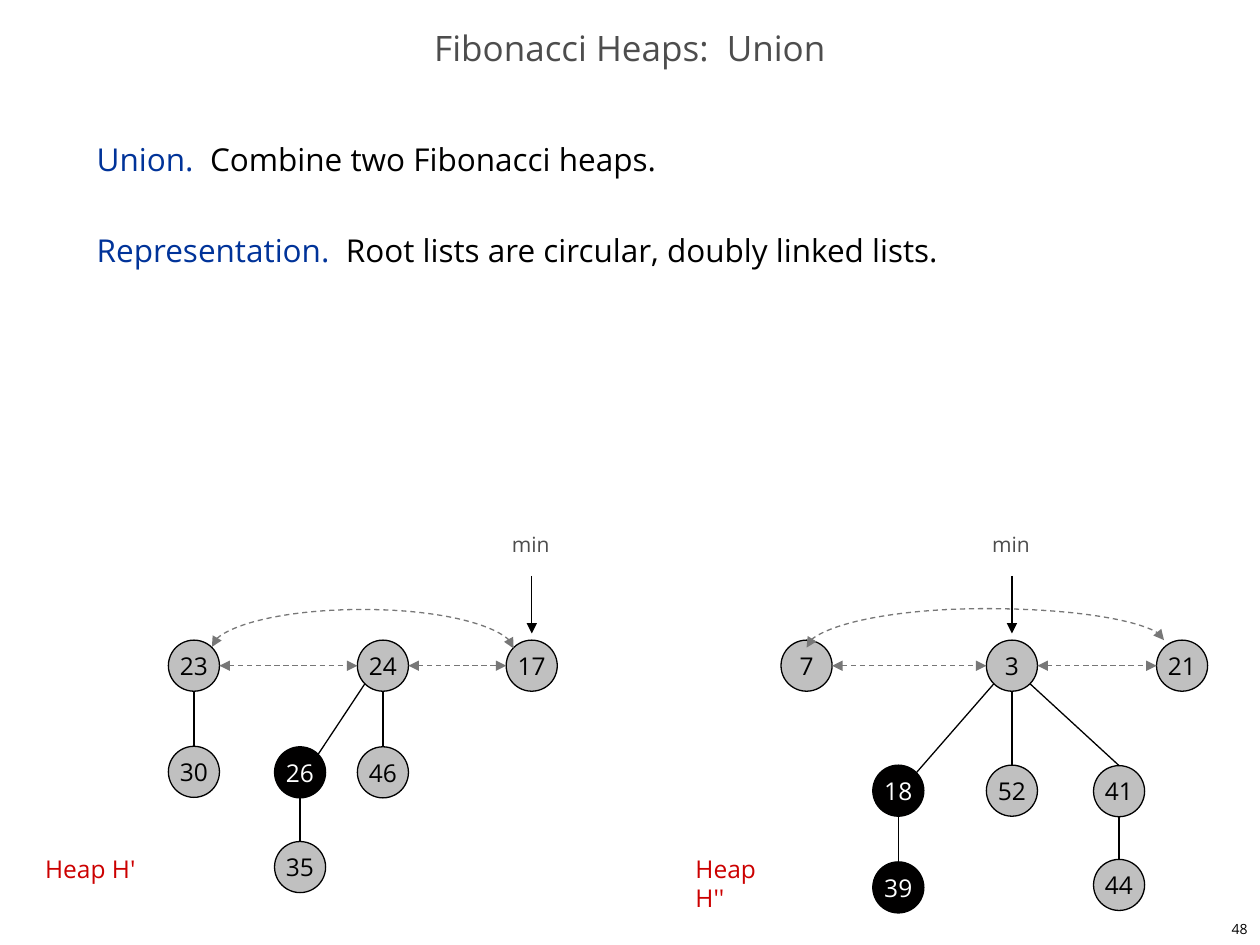
from dataclasses import dataclass
from math import sqrt

from lxml import etree
from pptx import Presentation
from pptx.dml.color import RGBColor
from pptx.enum.dml import MSO_LINE
from pptx.enum.shapes import MSO_CONNECTOR, MSO_SHAPE
from pptx.enum.text import MSO_ANCHOR, PP_ALIGN
from pptx.oxml.ns import qn
from pptx.util import Cm, Pt

STRAIGHT, CURVE = MSO_CONNECTOR.STRAIGHT, MSO_CONNECTOR.CURVE
OVAL, DASH = MSO_SHAPE.OVAL, MSO_LINE.DASH
LEFT, CENTER, RIGHT = PP_ALIGN.LEFT, PP_ALIGN.CENTER, PP_ALIGN.RIGHT
TOP, MIDDLE = MSO_ANCHOR.TOP, MSO_ANCHOR.MIDDLE


@dataclass(frozen=True)
class Theme:
    font: str = "Open Sans"
    ink: str = "000000"
    paper: str = "FFFFFF"
    muted: str = "4D4D4D"
    term: str = "003399"
    heap: str = "CC0000"
    node: str = "C0C0C0"
    marked: str = "010000"
    link: str = "777777"
    title_size: int = 20
    body_size: int = 18
    node_size: int = 14
    min_size: int = 12
    number_size: int = 8
    line_width: float = 0.75


THEME = Theme()

# Heap geometry in centimetres, relative to the box of the heap
RADIUS = 0.515
ROOT_Y = 2.83
ARC_Y = 1.68
ARC_RISE = 0.03
DIAGONAL = RADIUS / sqrt(2)
SITES = {
    "top": (0, -RADIUS), "bottom": (0, RADIUS),
    "left": (-RADIUS, 0), "right": (RADIUS, 0),
    "top left": (-DIAGONAL, -DIAGONAL), "top right": (DIAGONAL, -DIAGONAL),
    "bottom left": (-DIAGONAL, DIAGONAL), "bottom right": (DIAGONAL, DIAGONAL),
}

# Nodes: key -> centre x, centre y; edges: parent, site, child, site
FIRST_HEAP = {
    "label": "Heap H'",
    "roots": [23, 24, 17],
    "min": 17,
    "arc_end": "top right",
    "marked": {26},
    "nodes": {23: (3.25, ROOT_Y), 24: (7.06, ROOT_Y), 17: (10.06, ROOT_Y),
              30: (3.25, 4.97), 26: (5.39, 4.98), 46: (7.06, 4.98),
              35: (5.39, 6.89)},
    "edges": [(23, "bottom", 30, "top"), (24, "bottom left", 26, "top right"),
              (24, "bottom", 46, "top"), (26, "bottom", 35, "top")],
}
SECOND_HEAP = {
    "label": "Heap H''",
    "roots": [7, 3, 21],
    "min": 3,
    "arc_end": "top",
    "marked": {18, 39},
    "nodes": {7: (2.49, ROOT_Y), 3: (6.63, ROOT_Y), 21: (10.06, ROOT_Y),
              18: (4.34, 5.35), 52: (6.63, 5.35), 41: (8.79, 5.36),
              39: (4.34, 7.3), 44: (8.79, 7.25)},
    "edges": [(3, "bottom left", 18, "top right"), (3, "bottom", 52, "top"),
              (3, "bottom right", 41, "top"), (18, "bottom", 39, "top"),
              (41, "bottom", 44, "top")],
}


def add_run(paragraph, text, size, color):
    run = paragraph.add_run()
    run.text = text
    run.font.name = THEME.font
    run.font.size = Pt(size)
    run.font.color.rgb = RGBColor.from_string(color)


def add_text(slide, box, runs, size, align=LEFT, anchor=TOP, wrap=True):
    """Place one paragraph of (text, colour) runs and return it."""
    frame = slide.shapes.add_textbox(*map(Cm, box)).text_frame
    frame.word_wrap = wrap
    frame.vertical_anchor = anchor
    paragraph = frame.paragraphs[0]
    paragraph.alignment = align
    for text, color in runs:
        add_run(paragraph, text, size, color)
    return paragraph


def add_line(slide, start, end, color, kind=STRAIGHT, dashed=False, ends=()):
    line = slide.shapes.add_connector(kind, *map(Cm, (*start, *end)))
    line.line.color.rgb = RGBColor.from_string(color)
    line.line.width = Pt(THEME.line_width)
    if dashed:
        line.line.dash_style = DASH
    outline = line.line._get_or_add_ln()
    for end_name in ends:
        etree.SubElement(outline, qn(f"a:{end_name}"), type="triangle")
    etree.SubElement(line._element.spPr, qn("a:effectLst"))
    return line


def add_link(slide, start, end, kind=STRAIGHT):
    return add_line(slide, start, end, THEME.link, kind, True, ("headEnd", "tailEnd"))


def add_arc(slide, start, end, peak):
    """Curve leftwards from start to end by way of the height peak."""
    span = start[0] - end[0]
    rise = max(start[1] - end[1], ARC_RISE)
    arc = add_link(slide, start, end, CURVE)
    # A quarter turn makes the connector leave and arrive vertically
    arc.width, arc.height = Cm(rise), Cm(span)
    arc.left = Cm((start[0] + end[0] - rise) / 2)
    arc.top = Cm((start[1] + end[1] - span) / 2)
    transform = arc._element.spPr.find(qn("a:xfrm"))
    transform.set("rot", str(90 * 60000))
    transform.set("flipH", "1")
    adjustments = arc._element.spPr.find(qn("a:prstGeom")).find(qn("a:avLst"))
    bend = round((start[1] - peak) / rise * 100000)
    etree.SubElement(adjustments, qn("a:gd"), name="adj1", fmla=f"val {bend}")


def add_node(slide, center, key, marked):
    box = (center[0] - RADIUS, center[1] - RADIUS, 2 * RADIUS, 2 * RADIUS)
    node = slide.shapes.add_shape(OVAL, *map(Cm, box))
    node.shadow.inherit = False
    node.fill.solid()
    node.fill.fore_color.rgb = RGBColor.from_string(THEME.marked if marked else THEME.node)
    node.line.color.rgb = RGBColor.from_string(THEME.ink)
    node.line.width = Pt(THEME.line_width)
    frame = node.text_frame
    frame.word_wrap = False
    frame.vertical_anchor = MIDDLE
    paragraph = frame.paragraphs[0]
    paragraph.alignment = CENTER
    add_run(paragraph, str(key), THEME.node_size, THEME.paper if marked else THEME.ink)


def add_heap(slide, left, top, heap):
    centers = {key: (left + x, top + y) for key, (x, y) in heap["nodes"].items()}

    def site(key, name):
        return tuple(c + d for c, d in zip(centers[key], SITES[name]))

    # Trees
    for parent, parent_site, child, child_site in heap["edges"]:
        add_line(slide, site(parent, parent_site), site(child, child_site), THEME.ink)
    for key, center in centers.items():
        add_node(slide, center, key, key in heap["marked"])

    # Circular root list
    roots = heap["roots"]
    for before, after in zip(roots, roots[1:]):
        add_link(slide, site(before, "right"), site(after, "left"))
    add_arc(slide, site(roots[-1], "top left"), site(roots[0], heap["arc_end"]), top + ARC_Y)

    # Pointer to the minimum
    min_x = centers[heap["min"]][0]
    add_text(slide, (min_x - 0.65, top, 1.3, 0.76), [("min", THEME.muted)],
             THEME.min_size, wrap=False)
    add_line(slide, (min_x, top + 1.02), (min_x, top + 2.18), THEME.ink, ends=("tailEnd",))

    # Name of the heap
    add_text(slide, (left, top + 6.5, 2.4, 0.84), [(heap["label"], THEME.heap)],
             THEME.node_size, wrap=False)


def add_definitions(slide, box):
    first = add_text(slide, box, [("Union.  ", THEME.term),
                                  ("Combine two Fibonacci heaps.", THEME.ink)], THEME.body_size)
    first.line_spacing = first.space_after = Pt(26)
    second = slide.shapes[-1].text_frame.add_paragraph()
    second.line_spacing = Pt(26)
    add_run(second, "Representation.  ", THEME.body_size, THEME.term)
    add_run(second, "Root lists are circular, doubly linked lists.", THEME.body_size, THEME.ink)


def main():
    presentation = Presentation()
    presentation.slide_width, presentation.slide_height = Cm(25.4), Cm(19.05)
    slide = presentation.slides.add_slide(presentation.slide_layouts[6])

    title = add_text(slide, (0, 0.43, 25.4, 1.27), [("Fibonacci Heaps:  Union", THEME.muted)],
                     THEME.title_size, CENTER, MIDDLE)
    title.line_spacing = 0.7
    add_definitions(slide, (1.7, 2.54, 21.8, 15.04))
    add_heap(slide, 0.66, 10.59, FIRST_HEAP)
    add_heap(slide, 13.77, 10.59, SECOND_HEAP)
    add_text(slide, (20.12, 18.42, 5.28, 0.63), [("48", THEME.ink)],
             THEME.number_size, RIGHT, MIDDLE)
    presentation.save("out.pptx")


if __name__ == "__main__":
    main()
